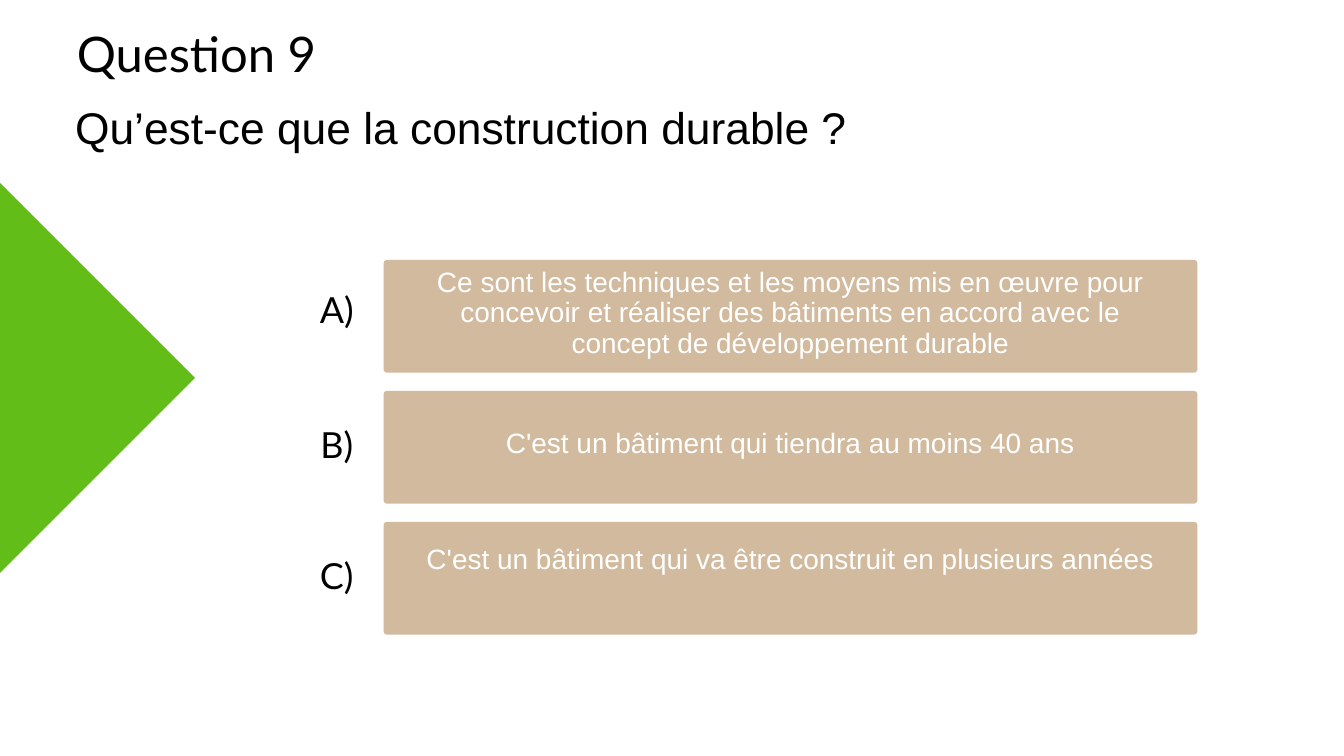
from pptx import Presentation
from pptx.dml.color import RGBColor
from pptx.enum.shapes import MSO_SHAPE
from pptx.enum.text import MSO_ANCHOR, MSO_AUTO_SIZE, PP_ALIGN
from pptx.oxml import parse_xml
from pptx.oxml.ns import nsdecls
from pptx.util import Cm, Pt

COLOURS = {"green": "62BD19", "sand": "D1BA9D", "black": "000000", "white": "FFFFFF"}

ANSWERS = [
    ("A)", 10.59, 10.11, 3.61,
     "Ce sont les techniques et les moyens mis en œuvre pour concevoir et réaliser "
     "des bâtiments en accord avec le concept de développement durable"),
    ("B)", 15.7, 16.21, 1.32, "C'est un bâtiment qui tiendra au moins 40 ans"),
    ("C)", 20.65, 20.6, 2.46, "C'est un bâtiment qui va être construit en plusieurs années"),
]
CARD_TOP = 9.83
CARD_PITCH = 4.95


def place(shape, left, top, width, height):
    shape.left, shape.top = Cm(left), Cm(top)
    shape.width, shape.height = Cm(width), Cm(height)


def write(shape, text, font, size, leading, colour, align=PP_ALIGN.CENTER):
    frame = shape.text_frame
    frame.text = text
    frame.word_wrap = True
    frame.auto_size = MSO_AUTO_SIZE.NONE
    frame.vertical_anchor = MSO_ANCHOR.TOP
    frame.margin_left = frame.margin_top = frame.margin_right = frame.margin_bottom = 0
    para = frame.paragraphs[0]
    para.alignment = align
    para.line_spacing = Pt(leading)
    para.space_before = Pt(0)
    span = para.runs[0]
    span.font.name = font
    span.font.size = Pt(size)
    span.font.color.rgb = RGBColor.from_string(COLOURS[colour])


def remove_bullet(para):
    properties = para._p.get_or_add_pPr()
    properties.set("marL", "0")
    properties.set("indent", "0")
    properties.append(parse_xml(f"<a:buNone {nsdecls('a')}/>"))


def add_filled_shape(page, kind, left, top, width, height, colour):
    shape = page.shapes.add_shape(kind, Cm(left), Cm(top), Cm(width), Cm(height))
    shape.shadow.inherit = False
    shape.fill.solid()
    shape.fill.fore_color.rgb = RGBColor.from_string(COLOURS[colour])
    shape.line.fill.background()
    return shape


def add_text(page, left, top, width, height, *style):
    box = page.shapes.add_textbox(Cm(left), Cm(top), Cm(width), Cm(height))
    write(box, *style)


def add_headings(page):
    title, body = page.placeholders
    place(title, 2.84, 0.51, 9.17, 2.77)
    write(title, "Question 9", "Lato", 52.5, 73.5, "black")
    place(body, 2.84, 3.96, 46.43, 2.11)
    write(body, "Qu’est-ce que la construction durable ?", "Arial", 47.5, 51.8,
          "black", PP_ALIGN.LEFT)
    remove_bullet(body.text_frame.paragraphs[0])


def add_answer(page, card_top, letter, letter_top, text_top, text_height, text):
    card = add_filled_shape(page, MSO_SHAPE.ROUNDED_RECTANGLE,
                            14.5, card_top, 30.76, 4.26, "sand")
    card.adjustments[0] = 0.03
    add_text(page, 12.02, letter_top, 1.42, 2.03, letter, "Lato", 38.5, 53.9, "black")
    add_text(page, 16.08, text_top, 27.58, text_height, text, "Arial", 30, 32.7, "white")


def main():
    deck = Presentation()
    deck.slide_width, deck.slide_height = Cm(50.8), Cm(28.58)
    page = deck.slides.add_slide(deck.slide_layouts[1])
    add_headings(page)
    add_filled_shape(page, MSO_SHAPE.DIAMOND, -7.44, 6.88, 14.81, 14.81, "green")
    for index, answer in enumerate(ANSWERS):
        add_answer(page, CARD_TOP + index * CARD_PITCH, *answer)
    deck.save("out.pptx")


if __name__ == "__main__":
    main()
